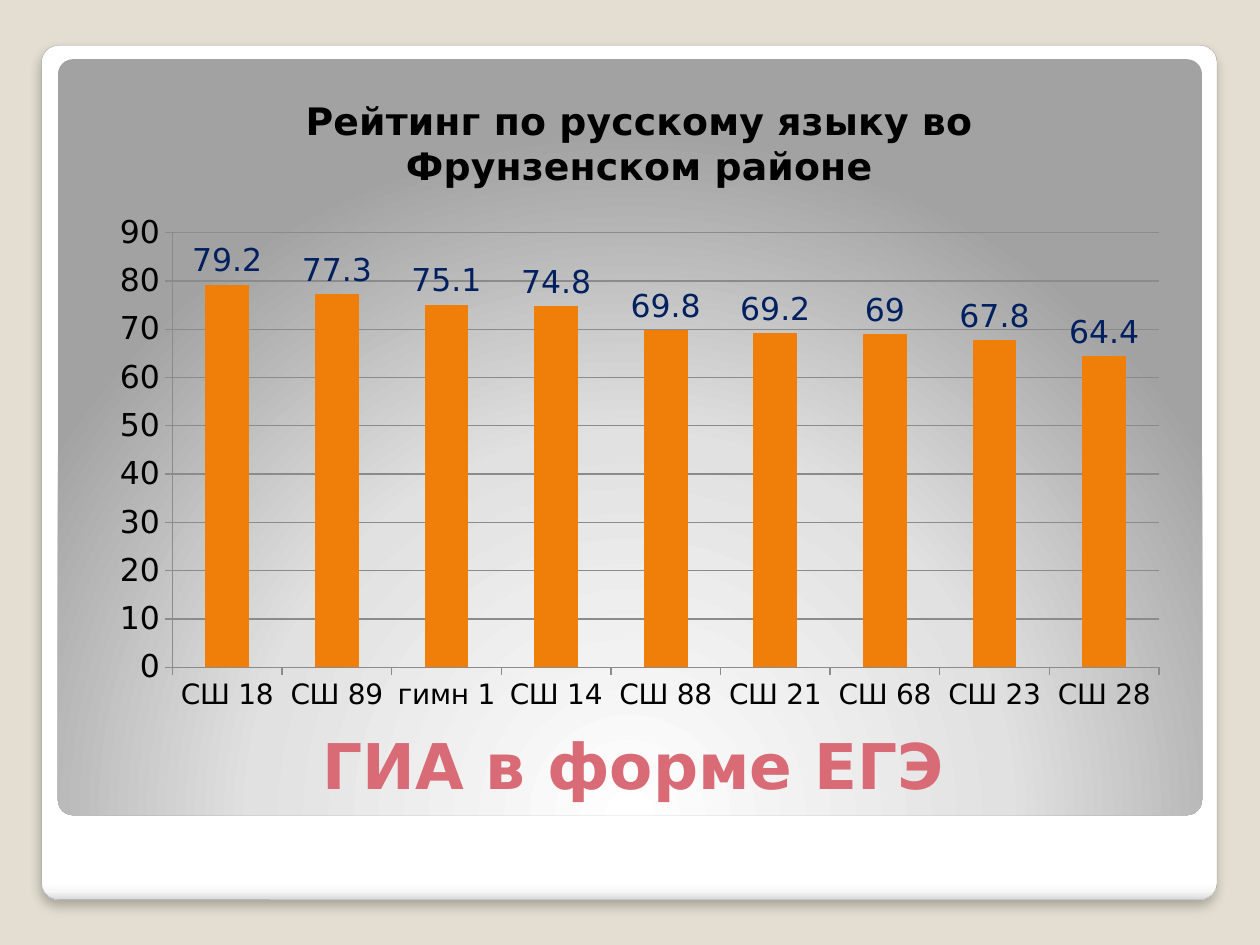
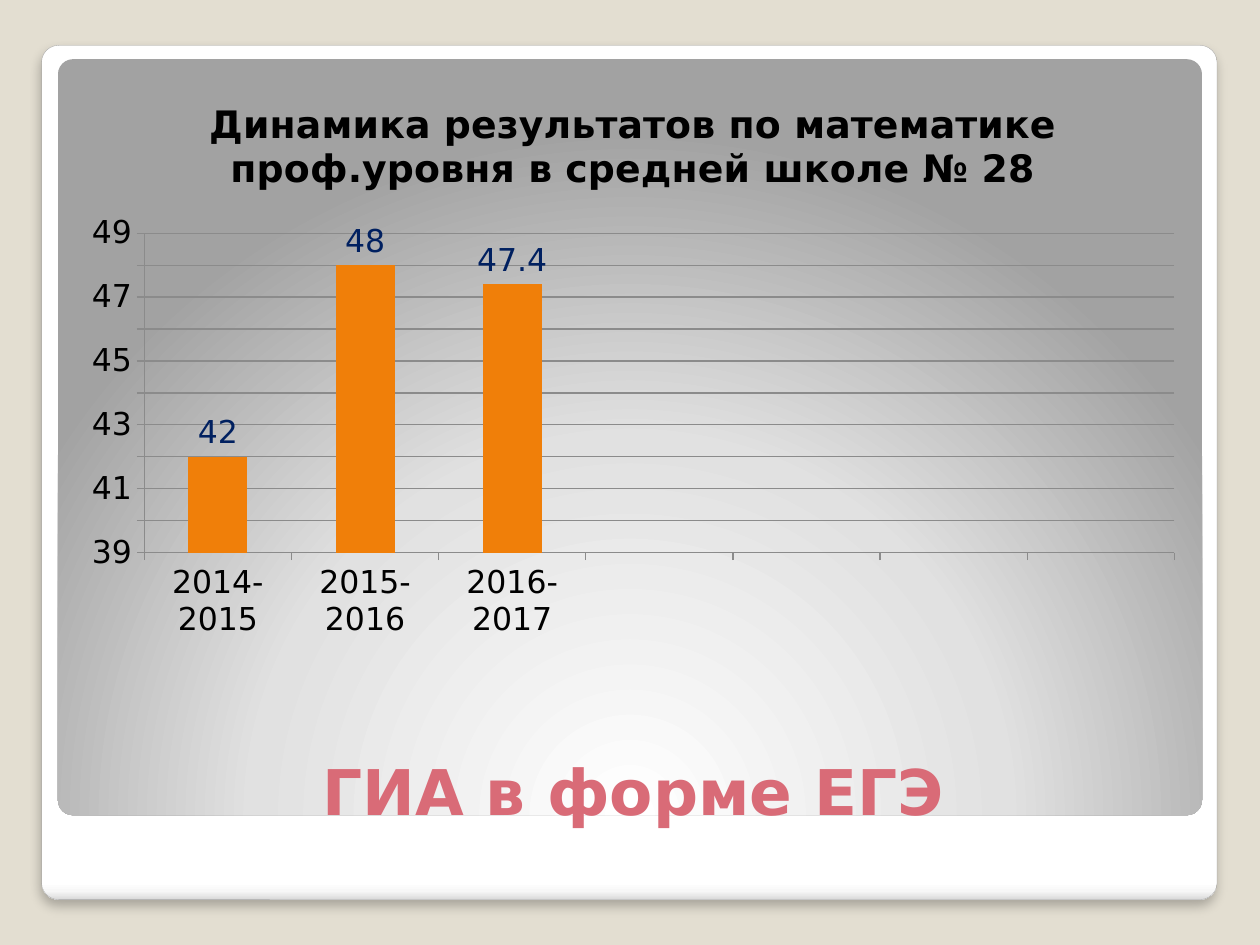
"""Build two slides with rating and trend charts of exam results."""
from dataclasses import dataclass

from lxml import etree
from pptx import Presentation
from pptx import util as u
from pptx.chart.data import CategoryChartData
from pptx.dml.color import RGBColor
from pptx.enum import chart as ch
from pptx.enum import shapes as sh
from pptx.enum import text as tx
from pptx.oxml.ns import nsdecls, qn

EMU_PER_PX = 9144
SLIDE_SIZE = (1000, 750)
HEADING = "ГИА в форме ЕГЭ"
FRAME_BOX = (33, 36, 933, 678)
PANEL_BOX = (46, 47, 908, 600)

SLIDES = [
    {
        "chart_title": "Рейтинг по русскому языку во Фрунзенском районе",
        "categories": ["СШ 18", "СШ 89", "гимн 1", "СШ 14", "СШ 88",
                       "СШ 21", "СШ 68", "СШ 23", "СШ 28"],
        "values": [79.2, 77.3, 75.1, 74.8, 69.8, 69.2, 69, 67.8, 64.4],
        "scale": (0, 90, 10),
        "category_size": 16,
        "chart_box": (78, 55, 859, 520),
        "heading_box": (55, 523, 895, 117),
    },
    {
        "chart_title": "Динамика результатов по математике проф.уровня "
                       "в средней школе № 28",
        "categories": ["2014-2015", "2015-2016", "2016-2017"] + [""] * 4,
        "values": [42, 48, 47.4] + [None] * 4,
        "scale": (39, 49, 1),
        "category_size": 18,
        "chart_box": (55, 58, 895, 458),
        "heading_box": (55, 545, 895, 115),
    },
]


@dataclass(frozen=True)
class Theme:
    font: str = "DejaVu Sans"
    background: str = "E3DED1"
    heading: str = "D96B77"
    ink: str = "000000"
    bar: str = "F07F09"
    label: str = "002060"
    grid: str = "8B8B8B"
    frame_line: str = "A4A4A4"
    frame_stops: tuple = ((0, "FFFFFF"), (98, "FFFFFF"), (99, "F7F7F7"), (100, "DADADA"))
    panel_stops: tuple = ((0, "FFFFFF"), (55, "E1E1E1"), (100, "A2A2A2"))
    corner: float = 0.02
    heading_size: float = 36
    chart_title_size: float = 21.6
    chart_size: float = 18


THEME = Theme()
DOWNWARD = '<a:lin ang="5400000" scaled="0"/>'
FROM_BELOW = ('<a:path path="circle"><a:fillToRect l="50000" t="175000" '
              'r="50000" b="-75000"/></a:path>')
SOFT_SHADOW = (f'<a:outerShdw {nsdecls("a")} blurRad="76200" dist="50800" dir="5400000" '
               'algn="ctr" rotWithShape="0"><a:srgbClr val="000000">'
               '<a:alpha val="25000"/></a:srgbClr></a:outerShdw>')


def px(box):
    return [u.Emu(length * EMU_PER_PX) for length in box]


def rgb(color):
    return RGBColor.from_string(color)


def style_font(font, size, color, bold=False):
    font.name = THEME.font
    font.size = u.Pt(size)
    font.bold = bold
    font.color.rgb = rgb(color)


def add_card(slide, box, stops, direction):
    card = slide.shapes.add_shape(sh.MSO_SHAPE.ROUNDED_RECTANGLE, *px(box))
    card.adjustments[0] = THEME.corner
    card.line.fill.background()
    card.shadow.inherit = False
    gradient_stops = "".join(
        f'<a:gs pos="{position * 1000}"><a:srgbClr val="{color}"/></a:gs>'
        for position, color in stops)
    gradient = etree.fromstring(
        f'<a:gradFill {nsdecls("a")} rotWithShape="1"><a:gsLst>{gradient_stops}'
        f'</a:gsLst>{direction}</a:gradFill>')
    card.element.spPr.find(qn("a:prstGeom")).addnext(gradient)
    return card


def decorate_layout(layout, slide):
    frame = add_card(slide, FRAME_BOX, THEME.frame_stops, DOWNWARD)
    frame.line.color.rgb = rgb(THEME.frame_line)
    frame.line.width = u.Pt(0.16)
    effects = frame.element.spPr.find(qn("a:effectLst"))
    effects.append(etree.fromstring(SOFT_SHADOW))
    panel = add_card(slide, PANEL_BOX, THEME.panel_stops, FROM_BELOW)
    for position, card in enumerate((frame, panel)):
        card.element.nvSpPr.cNvPr.set("id", str(101 + position))
        layout.shapes.element.insert(2 + position, card.element)


def set_heading(slide, box):
    heading = slide.shapes.title
    heading.left, heading.top, heading.width, heading.height = px(box)
    frame = heading.text_frame
    frame.text = HEADING
    frame.word_wrap = True
    frame.auto_size = tx.MSO_AUTO_SIZE.NONE
    frame.vertical_anchor = tx.MSO_ANCHOR.BOTTOM
    frame.margin_bottom = px([3])[0]
    paragraph = frame.paragraphs[0]
    paragraph.alignment = tx.PP_ALIGN.CENTER
    style_font(paragraph.runs[0].font, THEME.heading_size, THEME.heading, True)


def style_axes(chart, content):
    value_axis, category_axis = chart.value_axis, chart.category_axis
    value_axis.minimum_scale, value_axis.maximum_scale, value_axis.major_unit = content["scale"]
    value_axis.has_major_gridlines = True
    category_axis.tick_labels.font.size = u.Pt(content["category_size"])
    for axis in (value_axis, category_axis):
        axis.major_tick_mark = ch.XL_TICK_MARK.OUTSIDE
    for line in (value_axis.format.line, category_axis.format.line,
                 value_axis.major_gridlines.format.line):
        line.color.rgb = rgb(THEME.grid)
        line.width = u.Pt(0.75)


def add_bar_chart(slide, content):
    data = CategoryChartData()
    data.categories = content["categories"]
    data.add_series("Series 1", content["values"])
    chart = slide.shapes.add_chart(
        ch.XL_CHART_TYPE.COLUMN_CLUSTERED, *px(content["chart_box"]), data).chart
    style_font(chart.font, THEME.chart_size, THEME.ink)
    chart.has_legend = False
    title_frame = chart.chart_title.text_frame
    title_frame.text = content["chart_title"]
    style_font(title_frame.paragraphs[0].runs[0].font,
               THEME.chart_title_size, THEME.ink, True)
    style_axes(chart, content)
    plot = chart.plots[0]
    plot.vary_by_categories = False
    plot.gap_width = 150
    bars = plot.series[0]
    bars.invert_if_negative = False
    bars.format.fill.solid()
    bars.format.fill.fore_color.rgb = rgb(THEME.bar)
    labels = bars.data_labels
    labels.show_value = True
    labels.position = ch.XL_LABEL_POSITION.OUTSIDE_END
    style_font(labels.font, THEME.chart_size, THEME.label)


def main():
    presentation = Presentation()
    presentation.slide_width, presentation.slide_height = px(SLIDE_SIZE)
    background = presentation.slide_master.background.fill
    background.solid()
    background.fore_color.rgb = rgb(THEME.background)
    layout = presentation.slide_layouts.get_by_name("Title Only")
    slides = [presentation.slides.add_slide(layout) for _ in SLIDES]
    decorate_layout(layout, slides[0])
    for slide, content in zip(slides, SLIDES):
        set_heading(slide, content["heading_box"])
        add_bar_chart(slide, content)
    presentation.save("out.pptx")


if __name__ == "__main__":
    main()
